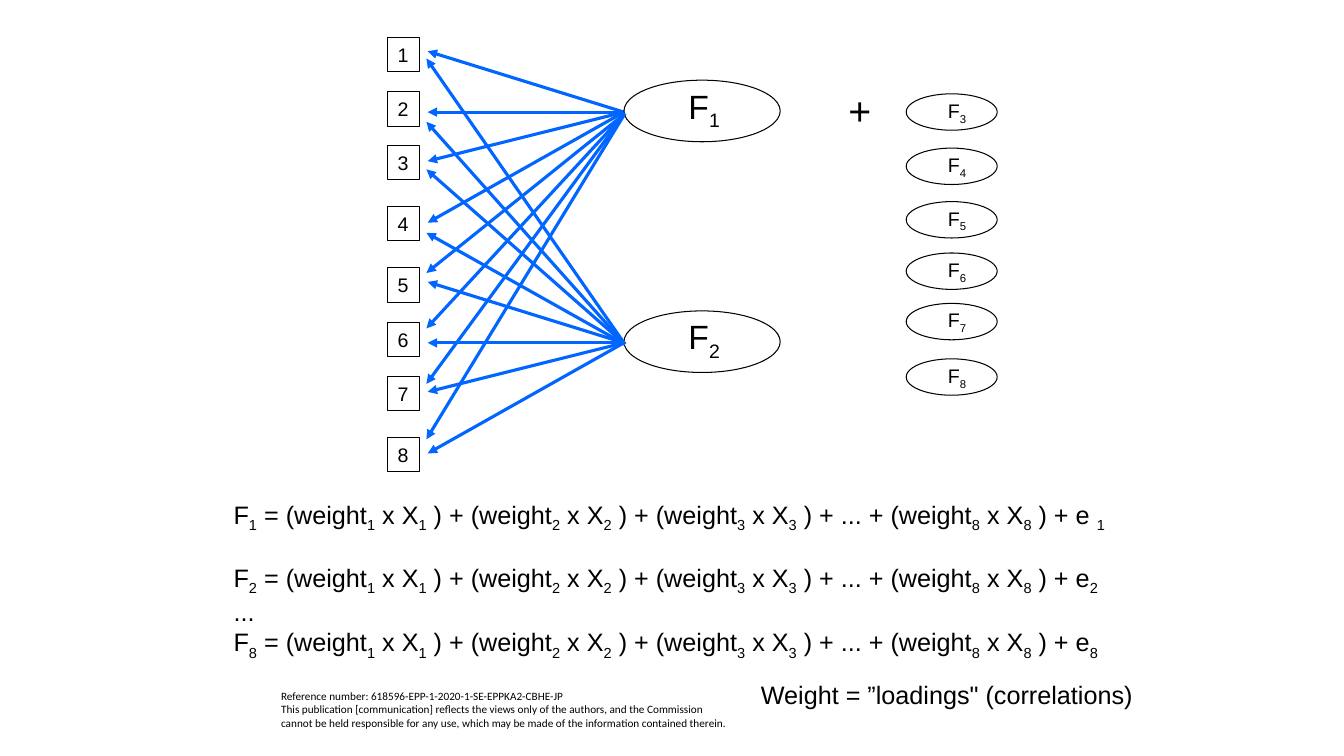
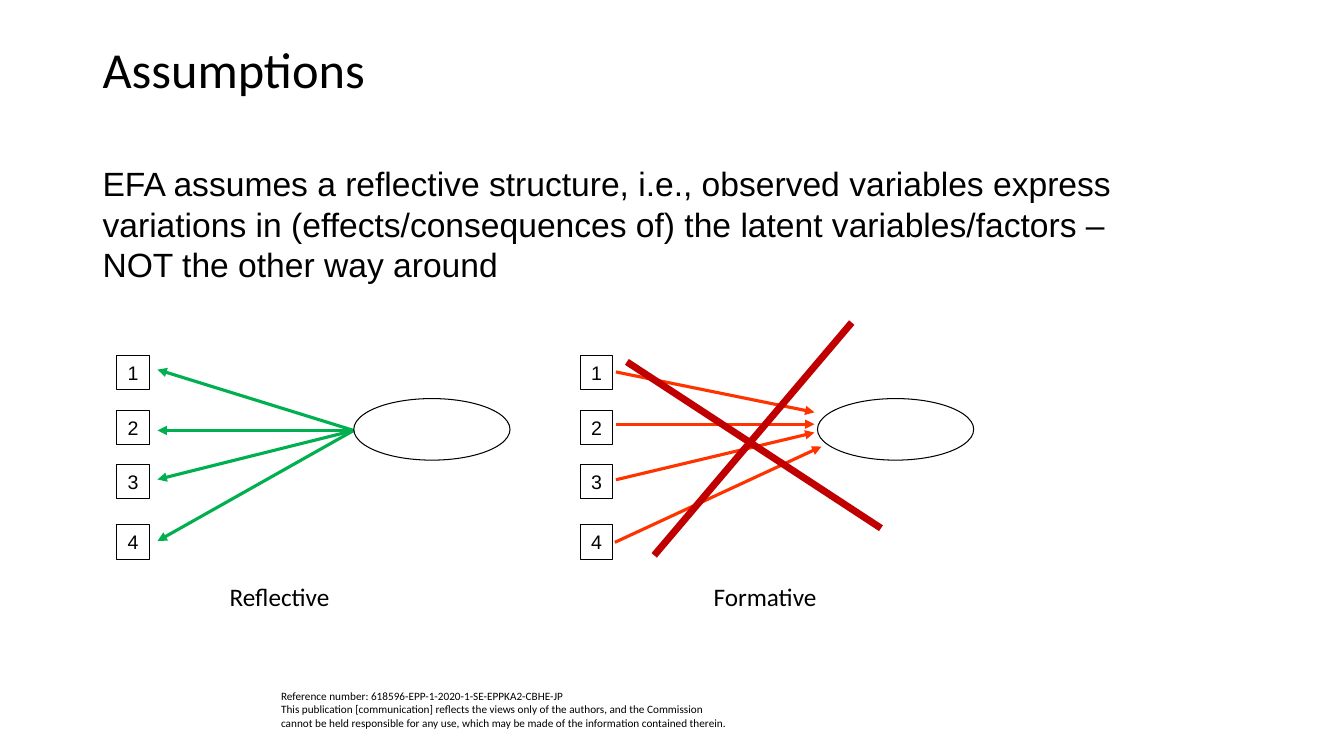
from pptx import Presentation
from pptx.dml.color import RGBColor
from pptx.enum.shapes import MSO_CONNECTOR, MSO_SHAPE
from pptx.enum.text import MSO_ANCHOR, PP_ALIGN
from pptx.oxml.ns import qn
from pptx.util import Pt
from lxml.etree import SubElement

# Shared style
BLACK = RGBColor(0x00, 0x00, 0x00)
BLUE = RGBColor(0x00, 0x66, 0xFF)
GREEN = RGBColor(0x00, 0xB0, 0x50)
ORANGE = RGBColor(0xFF, 0x33, 0x00)
DARK_RED = RGBColor(0xC0, 0x00, 0x00)
BODY_FONT, TITLE_FONT = "Arial", "Calibri"

FOOTER = [
    "Reference number: 618596-EPP-1-2020-1-SE-EPPKA2-CBHE-JP",
    "This publication [communication] reflects the views only of the authors, "
    "and the Commission cannot be held responsible for any use, which may be "
    "made of the information contained therein.",
]

# Content: an underscore makes the next character a subscript
SUM = (" = (weight_1 x X_1 ) + (weight_2 x X_2 ) + (weight_3 x X_3 )"
       " + ... + (weight_8 x X_8 ) + ")
FORMULAS = ["F_1" + SUM + "e _1", "F_2" + SUM + "e_2", "...", "F_8" + SUM + "e_8"]
LOADINGS = "Weight = ”loadings\" (correlations)"
ASSUMPTION = ("EFA assumes a reflective structure, i.e., observed variables express "
              "variations in (effects/consequences of) the latent variables/factors "
              "– NOT the other way around")

# Factor panel geometry, measured from the panel's top left corner
ITEM_TOPS = [0, 39, 77.5, 121]
ITEM_SIZE = (23, 24.5)
TIP_LEFT, TIP_TOPS = 29, [10, 53.5, 88.5, 132.5]
FACTOR_LEFT, FACTOR_TOP, FACTOR_SIZE = 169.2, 30.7, (111.6, 44)
HUB_TOP = 53.5

# Main factors: label, panel top, first item, tops of the cross-loading tips
PANEL_LEFT = 276.5
MAIN_FACTORS = [
    ("F_1", 26.6, 1, [195, 234.6, 274.2, 313.8]),
    ("F_2", 191.4, 5, [41.8, 87, 121, 166.3]),
]
MINOR_FACTORS = [("F_3", 67), ("F_4", 105.8), ("F_5", 144),
                 ("F_6", 180.7), ("F_7", 216.7), ("F_8", 256.3)]

# Comparison of the two structures
COMPARISON_TOP = 254
REFLECTIVE_LEFT, FORMATIVE_LEFT = 83.5, 414.7
FORMATIVE_ARROWS = [((440, 265.7), (581.8, 294.5)), ((440, 303), (581.8, 303)),
                    ((440, 342.7), (581.8, 309)), ((439.2, 387.4), (586.8, 319))]
CROSS_OUT = [((447.8, 258.5), (629.3, 377.3)), ((467.3, 396.7), (608.4, 230.4))]
CAPTIONS = [("Reflective", 157), ("Formative", 502.6)]


def write(frame, *paragraphs, size, font=BODY_FONT, align=PP_ALIGN.LEFT,
          line_spacing=None, gaps=()):
    """Fill a frame; gaps maps a paragraph index to the space before it."""
    gaps = dict(gaps)
    for index, text in enumerate(paragraphs):
        para = frame.add_paragraph() if index else frame.paragraphs[0]
        para.alignment = align
        para.line_spacing = line_spacing
        if index in gaps:
            para.space_before = Pt(gaps[index])
        first, *marked = text.split("_")
        pieces = [(first, False)]
        for part in marked:
            pieces += [(part[0], True), (part[1:], False)]
        for piece, lowered in pieces:
            if not piece:
                continue
            span = para.add_run()
            span.text = piece
            span.font.name, span.font.size = font, Pt(size)
            span.font.color.rgb = BLACK
            if lowered:
                span.font._element.set("baseline", "-25000")


def add_text(page, left, top, width, height, *paragraphs, **style):
    box = page.shapes.add_textbox(Pt(left), Pt(top), Pt(width), Pt(height))
    box.text_frame.word_wrap = True
    write(box.text_frame, *paragraphs, **style)


def add_outline(page, kind, left, top, size, text="", font_size=14, shift=0, lift=0):
    """Draw an unfilled shape, its label moved right by shift and up by lift."""
    shape = page.shapes.add_shape(kind, Pt(left), Pt(top), *map(Pt, size))
    shape.shadow.inherit = False
    shape.fill.background()
    shape.line.color.rgb, shape.line.width = BLACK, Pt(0.75)
    if text:
        frame = shape.text_frame
        frame.word_wrap = False
        frame.vertical_anchor = MSO_ANCHOR.MIDDLE
        frame.margin_left, frame.margin_bottom = Pt(2 * shift), Pt(2 * lift)
        frame.margin_right = frame.margin_top = 0
        write(frame, text, size=font_size, align=PP_ALIGN.CENTER)


def add_line(page, start, end, color, width=2.25, arrow=True):
    line = page.shapes.add_connector(MSO_CONNECTOR.STRAIGHT, *map(Pt, start + end))
    line.line.color.rgb, line.line.width = color, Pt(width)
    if arrow:
        SubElement(line.line._get_or_add_ln(), qn("a:tailEnd"), type="triangle")
    SubElement(line._element.spPr, qn("a:effectLst"))


def add_panel(page, left, top, first_item=1, factor="", color=None):
    """Draw four items and their factor, with arrows to the items if coloured."""
    if color is not None:
        for tip in TIP_TOPS:
            add_line(page, (left + FACTOR_LEFT, top + HUB_TOP),
                     (left + TIP_LEFT, top + tip), color)
    add_outline(page, MSO_SHAPE.OVAL, left + FACTOR_LEFT, top + FACTOR_TOP,
                FACTOR_SIZE, factor, font_size=24, shift=1.5, lift=1.8)
    for number, offset in enumerate(ITEM_TOPS, first_item):
        add_outline(page, MSO_SHAPE.RECTANGLE, left, top + offset, ITEM_SIZE, str(number))


def add_page(deck):
    page = deck.slides.add_slide(deck.slide_layouts[6])
    add_text(page, 193.7, 488.9, 334, 36, *FOOTER, size=8, font=TITLE_FONT)
    return page


def build_model(deck):
    page = add_page(deck)
    # Main factors with their own and cross loadings
    for factor, top, first_item, cross_tips in MAIN_FACTORS:
        add_panel(page, PANEL_LEFT, top, first_item, factor, BLUE)
        hub = (PANEL_LEFT + FACTOR_LEFT + 0.7, top + HUB_TOP + 1)
        for tip in cross_tips:
            add_line(page, hub, (PANEL_LEFT + TIP_LEFT - 0.9, tip), BLUE)
    # Remaining factors
    add_text(page, 599, 58.3, 36, 41, "+", size=28)
    for factor, top in MINOR_FACTORS:
        add_outline(page, MSO_SHAPE.OVAL, 647.3, top, (65, 26), factor, shift=3.8)
    # Formulas
    add_text(page, 159.8, 352.8, 703.4, 160, *FORMULAS, size=18, gaps={1: 20.7})
    add_text(page, 536.4, 481.7, 300, 29, LOADINGS, size=18)


def build_assumptions(deck):
    page = add_page(deck)
    add_text(page, 66.2, 28.8, 828, 69, "Assumptions", size=36, font=TITLE_FONT,
             line_spacing=0.9)
    add_text(page, 66.2, 113, 785.5, 94.3, ASSUMPTION, size=24)
    # Reflective and formative structures
    add_panel(page, REFLECTIVE_LEFT, COMPARISON_TOP, color=GREEN)
    add_panel(page, FORMATIVE_LEFT, COMPARISON_TOP)
    for start, end in FORMATIVE_ARROWS:
        add_line(page, start, end, ORANGE)
    for caption, left in CAPTIONS:
        add_text(page, left, 411.8, 100, 29, caption, size=18, font=TITLE_FONT)
    # The formative structure is crossed out
    for start, end in CROSS_OUT:
        add_line(page, start, end, DARK_RED, width=5, arrow=False)


def main():
    deck = Presentation()
    deck.slide_width, deck.slide_height = Pt(960), Pt(540)
    build_model(deck)
    build_assumptions(deck)
    deck.save("out.pptx")


if __name__ == "__main__":
    main()
